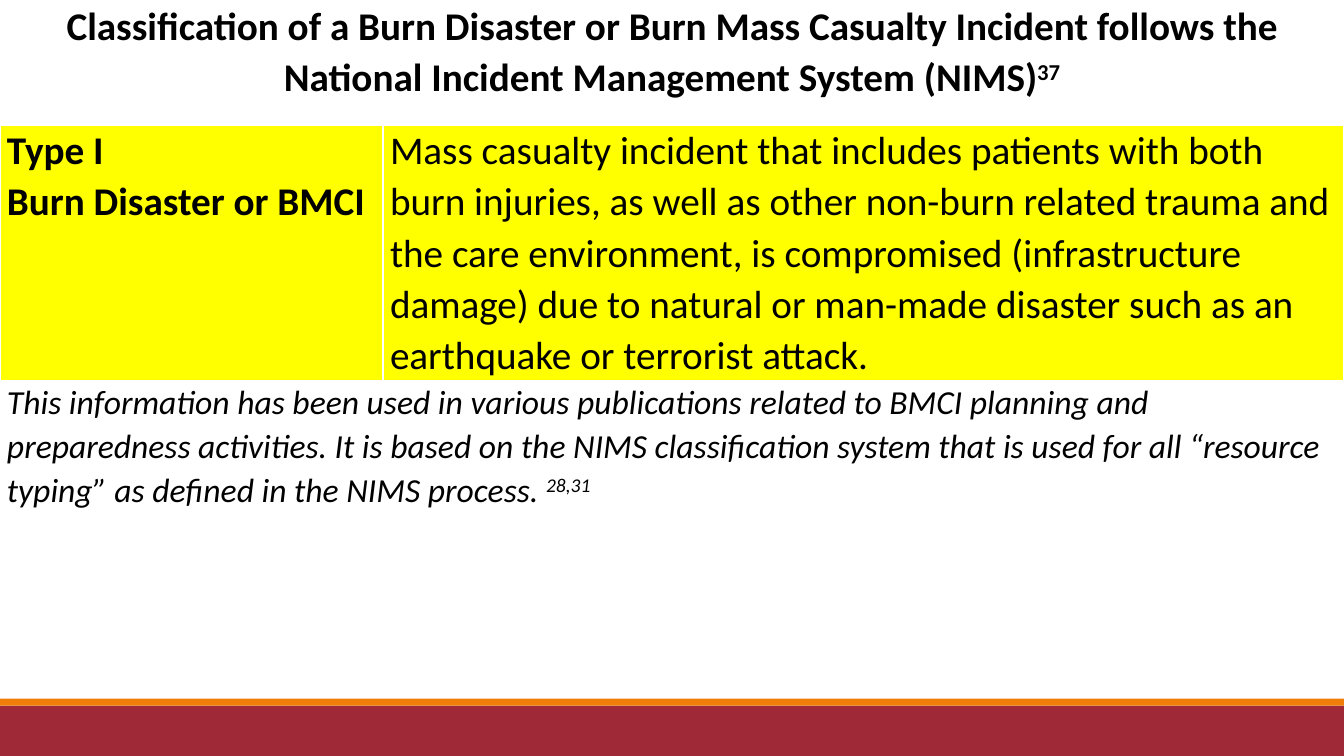
from dataclasses import dataclass

from lxml.etree import SubElement
from pptx import Presentation
from pptx.dml.color import RGBColor
from pptx.enum.shapes import MSO_SHAPE
from pptx.enum.text import PP_ALIGN
from pptx.oxml.ns import qn
from pptx.slide import Slide
from pptx.table import Table, _Cell
from pptx.util import Pt

WHITE = RGBColor(0xFF, 0xFF, 0xFF)
BLACK = RGBColor(0x00, 0x00, 0x00)
YELLOW = RGBColor(0xFF, 0xFF, 0x00)
RED = RGBColor(0x9F, 0x29, 0x36)
ORANGE = RGBColor(0xF0, 0x7F, 0x09)

SLIDE_W, SLIDE_H = 960, 540
COL_WIDTHS = (273.6, 686.4)
ROW_HEIGHTS = (88.5, 162, 121)


@dataclass(frozen=True)
class Band:
    top: float
    height: float
    color: RGBColor


@dataclass(frozen=True)
class CellText:
    row: int
    col: int
    paragraphs: tuple[str, ...]
    reference: str = ""
    size: float = 28
    bold: bool = False
    italic: bool = False
    align: PP_ALIGN = PP_ALIGN.LEFT
    fill: RGBColor = WHITE
    full_width: bool = False


BANDS = (
    Band(504, 36, RED),
    Band(499, 5, ORANGE),
)

CELLS = (
    CellText(
        0, 0,
        ("Classification of a Burn Disaster or Burn Mass Casualty Incident follows "
         "the National Incident Management System (NIMS)",),
        reference="37", bold=True, align=PP_ALIGN.CENTER, full_width=True),
    CellText(
        1, 0, ("Type I", "Burn Disaster or BMCI"), bold=True, fill=YELLOW),
    CellText(
        1, 1,
        ("Mass casualty incident that includes patients with both burn injuries, "
         "as well as other non-burn related trauma and the care environment, is "
         "compromised (infrastructure damage) due to natural or man-made disaster "
         "such as an earthquake or terrorist attack.",),
        fill=YELLOW),
    CellText(
        2, 0,
        ("This information has been used in various publications related to BMCI "
         "planning and preparedness activities. It is based on the NIMS "
         "classification system that is used for all “resource typing” as defined "
         "in the NIMS process. ",),
        reference="28,31", size=24, italic=True, full_width=True),
)


def add_band(s: Slide, band: Band) -> None:
    sp = s.shapes.add_shape(
        MSO_SHAPE.RECTANGLE, 0, Pt(band.top), Pt(SLIDE_W), Pt(band.height))
    sp.shadow.inherit = False
    sp.fill.solid()
    sp.fill.fore_color.rgb = band.color
    sp.line.fill.background()


def set_borders(cell: _Cell, bottom: float) -> None:
    tc_pr = cell._tc.get_or_add_tcPr()
    for side, width in (("L", 1), ("R", 1), ("T", 1), ("B", bottom)):
        ln = SubElement(tc_pr, qn(f"a:ln{side}"), w=str(Pt(width)))
        fill = SubElement(ln, qn("a:solidFill"))
        SubElement(fill, qn("a:srgbClr"), val=str(WHITE))


def add_run(p, text: str, style: CellText, superscript: bool = False) -> None:
    r = p.add_run()
    r.text = text
    r.font.name = "Calibri"
    r.font.size = Pt(style.size)
    r.font.bold = style.bold
    r.font.italic = style.italic
    r.font.color.rgb = BLACK
    if superscript:
        r._r.get_or_add_rPr().set("baseline", "30000")


def fill_cell(table: Table, content: CellText) -> None:
    cell = table.cell(content.row, content.col)
    if content.full_width:
        cell.merge(table.cell(content.row, len(COL_WIDTHS) - 1))
    cell.margin_left = cell.margin_right = Pt(5)
    cell.margin_top = cell.margin_bottom = 0
    cell.fill.solid()
    cell.fill.fore_color.rgb = content.fill
    tf = cell.text_frame
    for i, text in enumerate(content.paragraphs):
        p = tf.paragraphs[0] if i == 0 else tf.add_paragraph()
        p.alignment = content.align
        p.line_spacing = 1.07
        add_run(p, text, content)
    if content.reference:
        add_run(p, content.reference, content, superscript=True)


def add_classification_table(s: Slide) -> None:
    table = s.shapes.add_table(
        len(ROW_HEIGHTS), len(COL_WIDTHS), 0, 0,
        Pt(SLIDE_W), Pt(sum(ROW_HEIGHTS))).table
    table.first_row = table.horz_banding = False
    for column, width in zip(table.columns, COL_WIDTHS):
        column.width = Pt(width)
    for i, (row, height) in enumerate(zip(table.rows, ROW_HEIGHTS)):
        row.height = Pt(height)
        for cell in row.cells:
            set_borders(cell, bottom=3 if i == 0 else 1)
    for content in CELLS:
        fill_cell(table, content)


def main() -> None:
    prs = Presentation()
    prs.slide_width, prs.slide_height = Pt(SLIDE_W), Pt(SLIDE_H)
    s = prs.slides.add_slide(prs.slide_layouts[6])
    s.background.fill.solid()
    s.background.fill.fore_color.rgb = WHITE

    # Footer bands
    for band in BANDS:
        add_band(s, band)

    # Heading, classification and source note
    add_classification_table(s)

    prs.save("out.pptx")


if __name__ == "__main__":
    main()
